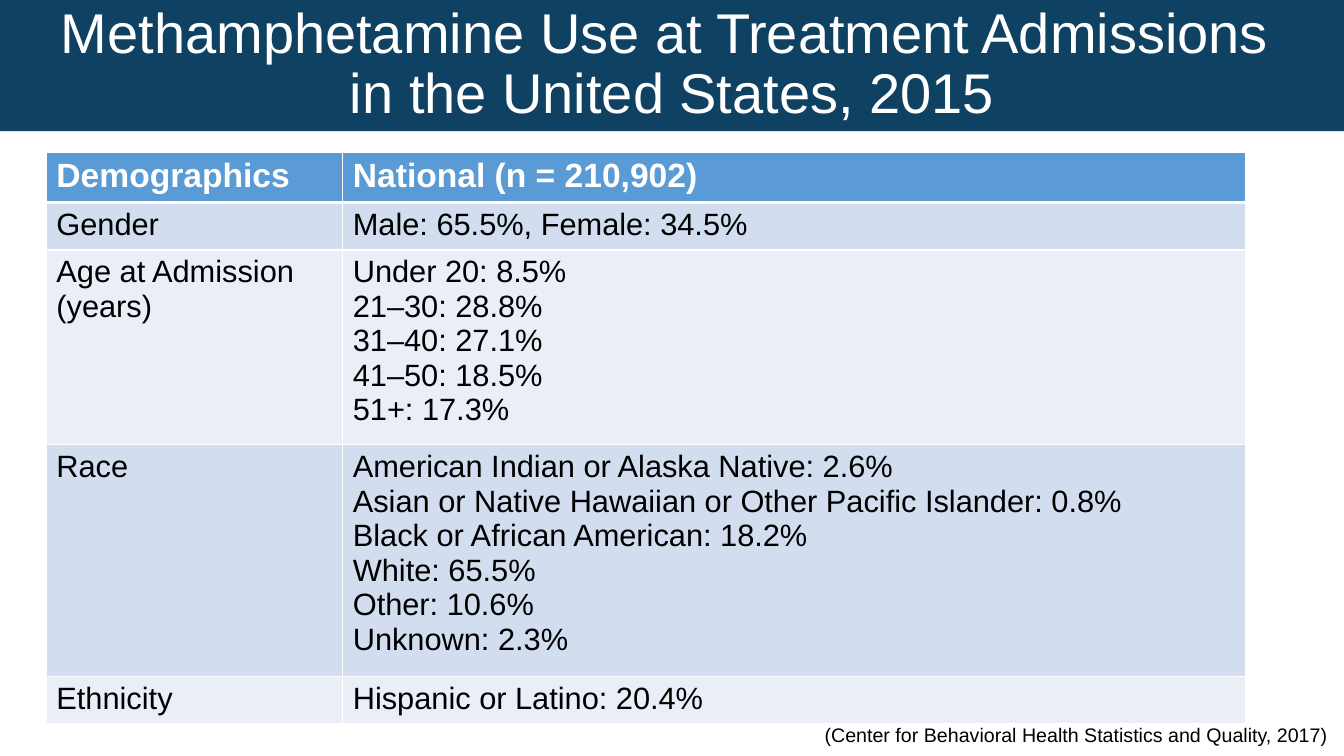
from dataclasses import dataclass

from lxml.etree import SubElement
from pptx import Presentation
from pptx.dml.color import RGBColor as Rgb
from pptx.enum.text import MSO_ANCHOR as Anchor, MSO_AUTO_SIZE as AutoSize, PP_ALIGN as Align
from pptx.oxml.ns import qn
from pptx.util import Inches, Pt


@dataclass(frozen=True)
class Theme:
    font: str = "Arial"
    banner: str = "0F4162"
    header: str = "5B9BD5"
    bands: tuple = ("D2DEEF", "EAEFF7")
    light: str = "FFFFFF"
    dark: str = "000000"
    title_size: int = 40
    header_size: int = 24
    body_size: int = 22
    source_size: int = 14


THEME = Theme()

TITLE = ["Methamphetamine Use at Treatment Admissions ", "in the United States, 2015"]
SOURCE = "(Center for Behavioral Health Statistics and Quality, 2017)"

COLUMN_WIDTHS = (2.94, 8.95)
# Row height, label and the lines of the national figures
DEMOGRAPHICS = [
    (0.49, "Demographics", ["National (n = 210,902)"]),
    (0.47, "Gender", ["Male: 65.5%, Female: 34.5%"]),
    (1.93, "Age at Admission (years)", [
        "Under 20: 8.5%",
        "21–30: 28.8%",
        "31–40: 27.1%",
        "41–50: 18.5%",
        "51+: 17.3%",
    ]),
    (2.29, "Race", [
        "American Indian or Alaska Native: 2.6%",
        "Asian or Native Hawaiian or Other Pacific Islander: 0.8%",
        "Black or African American: 18.2%",
        "White: 65.5%",
        "Other: 10.6%",
        "Unknown: 2.3%",
    ]),
    (0.47, "Ethnicity", ["Hispanic or Latino: 20.4%"]),
]


def write(frame, lines, size, color, bold=False):
    frame.text = "\n".join(lines)
    for paragraph in frame.paragraphs:
        font = paragraph.font
        font.name, font.size, font.bold = THEME.font, Pt(size), bold
        font.color.rgb = Rgb.from_string(color)


def paint(target, color):
    target.fill.solid()
    target.fill.fore_color.rgb = Rgb.from_string(color)


def set_borders(cell, top, bottom):
    properties = cell._tc.get_or_add_tcPr()
    for side, width in (("L", 1), ("R", 1), ("T", top), ("B", bottom)):
        line = SubElement(properties, qn(f"a:ln{side}"), w=str(Pt(width)))
        fill = SubElement(line, qn("a:solidFill"))
        SubElement(fill, qn("a:srgbClr"), val=THEME.light)


def add_banner(slide, left, top, width, height):
    banner = slide.shapes.title
    banner.left, banner.top = Inches(left), Inches(top)
    banner.width, banner.height = Inches(width), Inches(height)
    paint(banner, THEME.banner)
    frame = banner.text_frame
    frame.auto_size = AutoSize.NONE
    frame.word_wrap = True
    frame.vertical_anchor = Anchor.MIDDLE
    write(frame, TITLE, THEME.title_size, THEME.light)
    for paragraph in frame.paragraphs:
        paragraph.alignment = Align.CENTER
        paragraph.line_spacing = 0.9
        paragraph.space_before = Pt(0)


def add_demographics(slide, left, top):
    height = sum(row[0] for row in DEMOGRAPHICS)
    table = slide.shapes.add_table(
        len(DEMOGRAPHICS), len(COLUMN_WIDTHS), Inches(left), Inches(top),
        Inches(sum(COLUMN_WIDTHS)), Inches(height)).table
    for column, width in zip(table.columns, COLUMN_WIDTHS):
        column.width = Inches(width)
    for index, (row_height, label, figures) in enumerate(DEMOGRAPHICS):
        table.rows[index].height = Inches(row_height)
        is_header = index == 0
        for cell, lines in zip(table.rows[index].cells, ([label], figures)):
            set_borders(cell, top=3 if index == 1 else 1, bottom=3 if is_header else 1)
            if is_header:
                paint(cell, THEME.header)
                write(cell.text_frame, lines, THEME.header_size, THEME.light, bold=True)
            else:
                paint(cell, THEME.bands[(index - 1) % 2])
                write(cell.text_frame, lines, THEME.body_size, THEME.dark)


def add_source(slide, left, top, width, height):
    source = slide.shapes.add_textbox(
        Inches(left), Inches(top), Inches(width), Inches(height))
    source.text_frame.word_wrap = True
    write(source.text_frame, [SOURCE], THEME.source_size, THEME.dark)


def main():
    deck = Presentation()
    deck.slide_width, deck.slide_height = Inches(13.33), Inches(7.5)
    slide = deck.slides.add_slide(deck.slide_layouts[5])
    add_source(slide, 8.08, 7.12, 5.69, 0.34)
    add_banner(slide, 0, 0, 13.33, 1.3)
    add_demographics(slide, 0.46, 1.51)
    deck.save("out.pptx")


if __name__ == "__main__":
    main()
